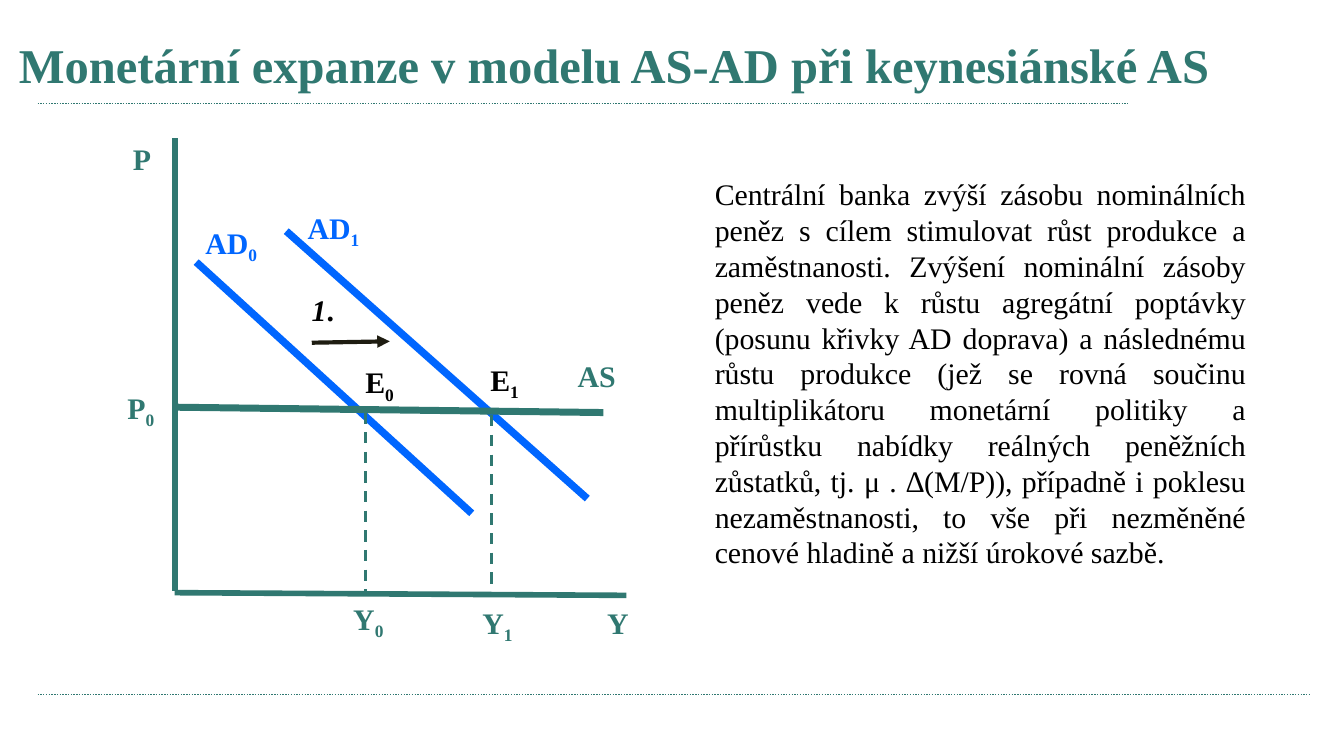
from dataclasses import dataclass

from lxml.etree import SubElement
from pptx import Presentation
from pptx.dml.color import RGBColor
from pptx.enum.dml import MSO_LINE_DASH_STYLE as Dash
from pptx.enum.shapes import MSO_CONNECTOR_TYPE as Connector
from pptx.enum.text import MSO_ANCHOR as Anchor, MSO_AUTO_SIZE as AutoSize, PP_ALIGN as Align
from pptx.oxml.ns import qn
from pptx.util import Inches, Pt


@dataclass(frozen=True)
class Theme:
    font: str = "Times New Roman"
    green: str = "307871"
    blue: str = "0066FF"
    black: str = "000000"
    arrow: str = "1E1C11"
    title_size: float = 26
    text_size: float = 16
    rule: float = 0.75
    guide: float = 1.5
    shift: float = 2.25
    axis: float = 3
    supply: float = 3.75
    demand: float = 4


THEME = Theme()

TITLE = "Monetární expanze v modelu AS-AD při keynesiánské AS"
EXPLANATION = (
    "Centrální banka zvýší zásobu nominálních peněz s cílem stimulovat růst produkce "
    "a zaměstnanosti. Zvýšení nominální zásoby peněz vede k růstu agregátní poptávky "
    "(posunu křivky AD doprava) a následnému růstu produkce (jež se rovná součinu "
    "multiplikátoru monetární politiky a přírůstku nabídky reálných peněžních zůstatků, "
    "tj. μ . ∆(M/P)), případně i poklesu nezaměstnanosti, to vše při nezměněné cenové "
    "hladině a nižší úrokové sazbě."
)


def add_span(para, text, color, size=THEME.text_size, subscript=False, **formats):
    span = para.add_run()
    span.text = text
    for name, value in {"name": THEME.font, "size": Pt(size), **formats}.items():
        setattr(span.font, name, value)
    span.font.color.rgb = RGBColor.from_string(color)
    if subscript:
        span.font._element.set("baseline", "-25000")


def add_line(page, start, end, color, width, dash=None, arrow=False):
    line = page.shapes.add_connector(Connector.STRAIGHT, *map(Inches, (*start, *end)))
    line.line.color.rgb = RGBColor.from_string(color)
    line.line.width = Pt(width)
    if dash:
        line.line.dash_style = dash
    if arrow:
        SubElement(line.line._get_or_add_ln(), qn("a:tailEnd"), type="triangle")
    SubElement(line._element.spPr, qn("a:effectLst"))


def add_text_box(page, box):
    frame = page.shapes.add_textbox(*map(Inches, box)).text_frame
    frame.word_wrap = True
    return frame


def add_title(page, box):
    title = page.shapes.title
    for name, value in zip(("left", "top", "width", "height"), box):
        setattr(title, name, Inches(value))
    frame = title.text_frame
    formats = {"word_wrap": True, "auto_size": AutoSize.NONE, "vertical_anchor": Anchor.MIDDLE}
    for name, value in formats.items():
        setattr(frame, name, value)
    para = frame.paragraphs[0]
    para.alignment = Align.LEFT
    add_span(para, TITLE, THEME.green, THEME.title_size, bold=True)


def add_rules(page, box):
    """Dotted lines along the top and the bottom of the content area."""
    left, top, width, height = box
    for y, length in ((top, 8.11), (top + height, width)):
        add_line(page, (left, y), (left + length, y), THEME.green, THEME.rule, Dash.ROUND_DOT)


def add_diagram(page, box):
    """AS-AD diagram; every point is measured from the corner of the box."""
    left, top, width, height = box
    floor = height - 0.42
    solid_lines = (
        ((0.45, 0.03), (0.45, floor - 0.02), THEME.green, THEME.axis),
        ((0.45, floor - 0.01), (3.81, floor + 0.01), THEME.green, THEME.axis),
        ((0.61, 0.95), (2.66, 2.82), THEME.blue, THEME.demand),
        ((1.28, 0.72), (3.52, 2.71), THEME.blue, THEME.demand),
        ((0.46, 2.03), (3.64, 2.07), THEME.green, THEME.supply),
    )
    for (x1, y1), (x2, y2), color, weight in solid_lines:
        add_line(page, (left + x1, top + y1), (left + x2, top + y2), color, weight)

    for x, y in ((1.87, 2.07), (2.81, 2.09)):
        add_line(page, (left + x, top + y), (left + x, top + y + 1.34),
                 THEME.green, THEME.guide, Dash.DASH)

    add_line(page, (left + 1.47, top + 1.55), (left + 2.05, top + 1.54),
             THEME.arrow, THEME.shift, arrow=True)

    labels = (
        ("P", "", 0.04, 0, 0.32, THEME.green),
        ("P", "0", 0, 1.85, 0.5, THEME.green),
        ("Y", "", 3.57, 3.45, 1.16, THEME.green),
        ("Y", "0", 1.68, 3.42, 0.52, THEME.green),
        ("Y", "1", 2.64, 3.45, 0.52, THEME.green),
        ("AD", "0", 0.58, 0.62, 0.77, THEME.blue),
        ("AD", "1", 1.34, 0.51, 0.62, THEME.blue),
        ("AS", "", 3.35, 1.61, 0.91, THEME.green),
        ("E", "0", 1.77, 1.66, 0.47, THEME.black),
        ("E", "1", 2.7, 1.64, 0.47, THEME.black),
    )
    for name, index, x, y, label_width, color in labels:
        para = add_text_box(page, (left + x, top + y, label_width, 0.37)).paragraphs[0]
        add_span(para, name, color, bold=True)
        if index:
            add_span(para, index, color, bold=True, subscript=True)

    step = add_text_box(page, (left + 1.37, top + 1.12, 0.49, 0.34)).paragraphs[0]
    step.alignment = Align.JUSTIFY
    add_span(step, "1", THEME.black, bold=True, italic=True)
    add_span(step, ".", THEME.black, bold=True)


def add_explanation(page, box):
    para = add_text_box(page, box).paragraphs[0]
    para.alignment = Align.JUSTIFY
    para.space_after = Pt(6)
    add_span(para, EXPLANATION, THEME.black)


def main():
    deck = Presentation()
    deck.slide_width = Inches(10)
    deck.slide_height = deck.slide_width * 9 // 16
    page = deck.slides.add_slide(deck.slide_layouts.get_by_name("Title Only"))
    add_rules(page, (0.28, 0.77, 9.47, 4.4))
    add_title(page, (0.04, 0.2, 9.13, 0.56))
    add_diagram(page, (0.85, 1, 4.73, 3.84))
    add_explanation(page, (5.22, 1.26, 4.15, 3.69))
    deck.save("out.pptx")


if __name__ == "__main__":
    main()
